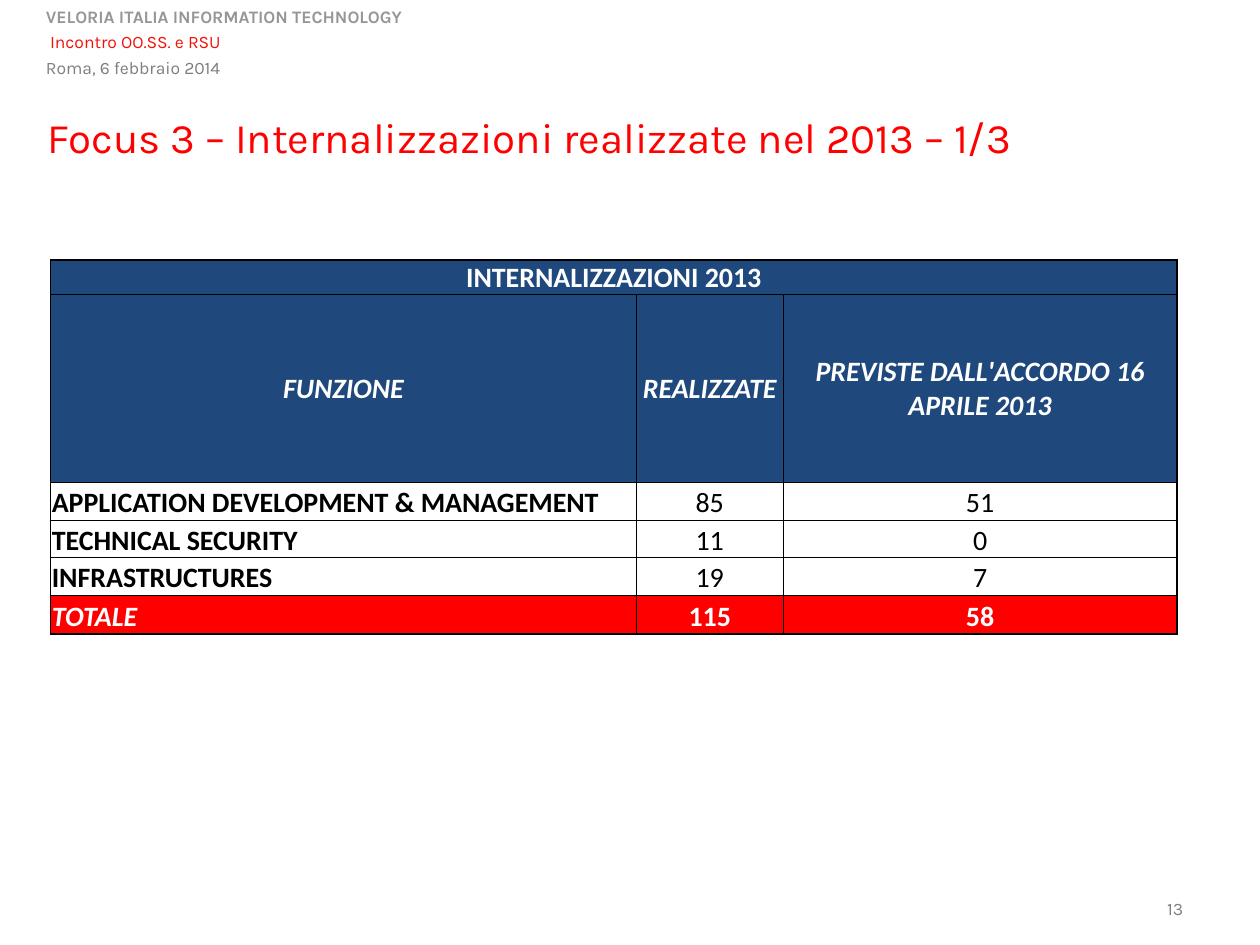
"""Build the slide on the activities brought in-house in 2013."""
from lxml.etree import SubElement
from pptx import Presentation
from pptx.dml.color import RGBColor
from pptx.enum.text import MSO_ANCHOR, MSO_AUTO_SIZE, PP_ALIGN
from pptx.oxml.ns import qn
from pptx.util import Pt

BLACK = RGBColor(0x00, 0x00, 0x00)
WHITE = RGBColor(0xFF, 0xFF, 0xFF)
NAVY = RGBColor(0x1F, 0x49, 0x7D)
RED = RGBColor(0xFF, 0x00, 0x00)
EVENT_RED = RGBColor(0xF3, 0x11, 0x07)
GRAY = RGBColor(0x96, 0x96, 0x96)
DARK_GRAY = RGBColor(0x7E, 0x7E, 0x7E)


def set_font(font, name, size, color, bold=False, italic=False):
    font.name, font.size = name, Pt(size)
    font.bold, font.italic = bold, italic
    font.color.rgb = color


def add_border(cell, side, width):
    line = SubElement(cell._tc.get_or_add_tcPr(), qn(f"a:{side}"), w=str(Pt(width)))
    fill = SubElement(line, qn("a:solidFill"))
    SubElement(fill, qn("a:srgbClr"), val=str(BLACK))


prs = Presentation()
prs.slide_width, prs.slide_height = Pt(720), Pt(540)
slide = prs.slides.add_slide(prs.slide_layouts[5])

title = slide.shapes.title
title.left, title.top, title.width, title.height = Pt(20), Pt(66), Pt(692), Pt(30)
title.text_frame.auto_size = MSO_AUTO_SIZE.NONE
title.text_frame.vertical_anchor = MSO_ANCHOR.MIDDLE
heading = title.text_frame.paragraphs[0]
heading.text = "Focus 3 – Internalizzazioni realizzate nel 2013 – 1/3"
heading.alignment = PP_ALIGN.LEFT
heading.line_spacing = 0.8
set_font(heading.font, "Karla", 24, RED)

header = slide.shapes.add_textbox(Pt(19.2), Pt(0), Pt(360), Pt(48)).text_frame
header.word_wrap = True
company = header.paragraphs[0]
company.text = "VELORIA ITALIA INFORMATION TECHNOLOGY"
set_font(company.font, "Karla", 10, GRAY, bold=True)
meeting = header.add_paragraph()
meeting.line_spacing = 1.2
set_font(meeting.font, "Karla", 10, DARK_GRAY)
event = meeting.add_run()
event.text = " Incontro OO.SS. e RSU"
event.font.color.rgb = EVENT_RED
meeting.add_line_break()
meeting.add_run().text = "Roma, 6 febbraio 2014"

footer = slide.shapes.add_textbox(Pt(604), Pt(502.5), Pt(79.2), Pt(26)).text_frame
footer.word_wrap = True
footer.vertical_anchor = MSO_ANCHOR.BOTTOM
page_number = footer.paragraphs[0]
page_number.text = "13"
page_number.alignment = PP_ALIGN.RIGHT
set_font(page_number.font, "Karla", 10, DARK_GRAY)

ROWS = [
    ("INTERNALIZZAZIONI 2013", "", ""),
    ("FUNZIONE", "REALIZZATE", "PREVISTE DALL'ACCORDO 16 APRILE 2013"),
    ("APPLICATION DEVELOPMENT & MANAGEMENT", "85", "51"),
    ("TECHNICAL SECURITY", "11", "0"),
    ("INFRASTRUCTURES", "19", "7"),
    ("TOTALE", "115", "58"),
]
COLUMN_WIDTHS = [334.6, 84, 225]
ROW_HEIGHTS = [19.5, 107.5, 21.5, 21.5, 21.5, 22]
last_row, last_column = len(ROWS) - 1, len(COLUMN_WIDTHS) - 1

table = slide.shapes.add_table(
    len(ROWS), len(COLUMN_WIDTHS), Pt(29), Pt(148.5),
    Pt(sum(COLUMN_WIDTHS)), Pt(sum(ROW_HEIGHTS))).table
table.first_row = table.horz_banding = False
for column, width in zip(table.columns, COLUMN_WIDTHS):
    column.width = Pt(width)
for row, height in zip(table.rows, ROW_HEIGHTS):
    row.height = Pt(height)
table.cell(0, 0).merge(table.cell(0, last_column))

for r, texts in enumerate(ROWS):
    is_head, is_total = r < 2, r == last_row
    for c, text in enumerate(texts):
        cell = table.cell(r, c)
        cell.margin_left = cell.margin_right = cell.margin_top = Pt(0.6)
        cell.margin_bottom = Pt(0)
        cell.vertical_anchor = MSO_ANCHOR.MIDDLE if is_head else MSO_ANCHOR.BOTTOM
        outer_sides = {"lnL": c == 0, "lnR": c == last_column or r == 0,
                       "lnT": r == 0, "lnB": is_total}
        for side, is_outer in outer_sides.items():
            add_border(cell, side, 1 if is_outer else 0.5)
        if is_head or is_total:
            cell.fill.solid()
            cell.fill.fore_color.rgb = NAVY if is_head else RED
        else:
            cell.fill.background()
        entry = cell.text_frame.paragraphs[0]
        entry.text = text
        entry.alignment = PP_ALIGN.CENTER if is_head or c else PP_ALIGN.LEFT
        set_font(entry.font, "Calibri", 16, WHITE if is_head or is_total else BLACK,
                 bold=is_head or is_total or c == 0,
                 italic=r == 1 or (is_total and c == 0))

prs.save("out.pptx")
